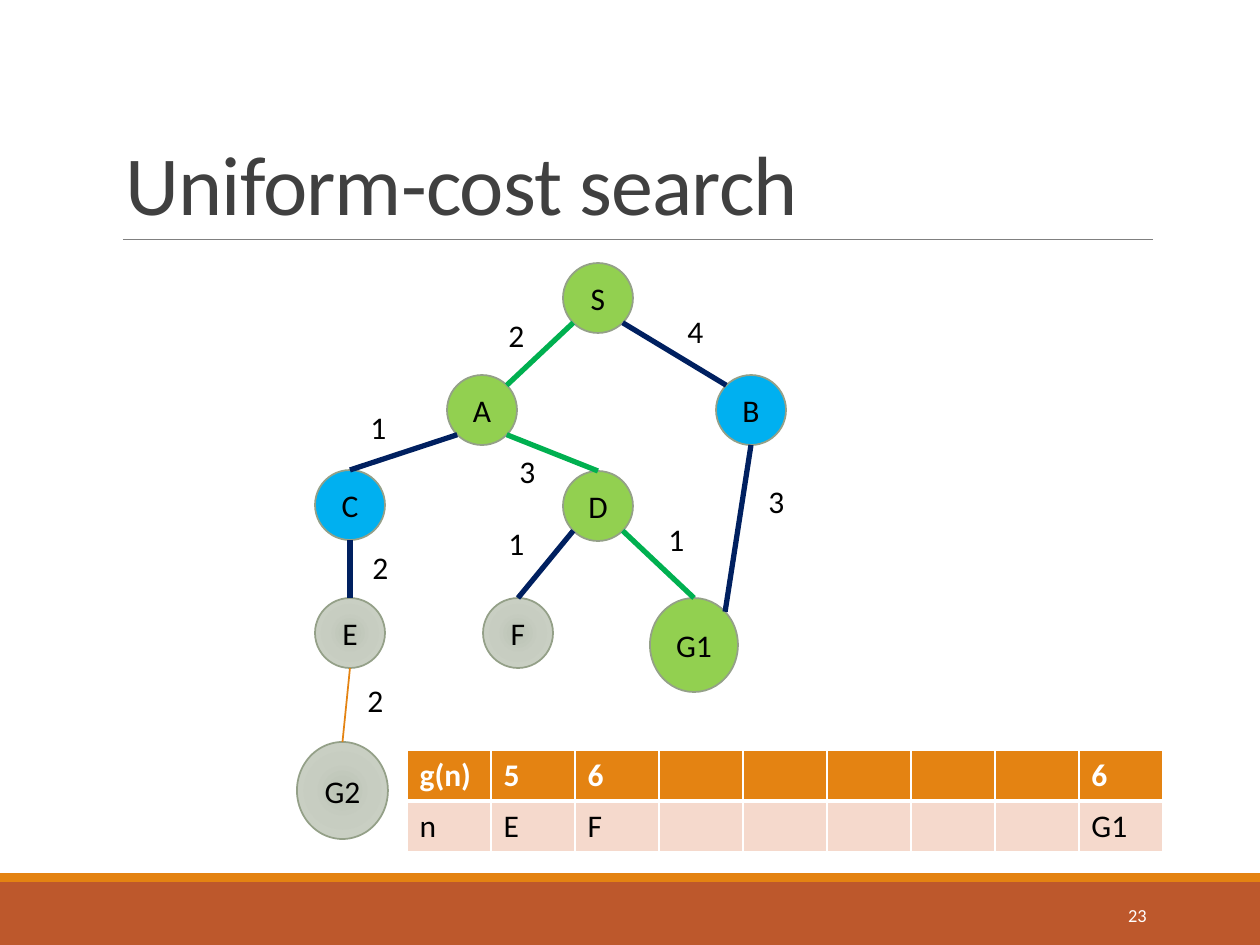
import math

from lxml import etree
from pptx import Presentation
from pptx import util as u
from pptx.dml.color import RGBColor
from pptx.enum import shapes, text
from pptx.oxml import parse_xml
from pptx.oxml.ns import nsdecls, qn

EMU_PER_PX = 914400 / 126
FONT = "Calibri"
COLORS = {
    "band": "BD582C", "accent": "E48312", "rule": "808080", "title": "404040",
    "black": "000000", "white": "FFFFFF", "outline": "94A088",
    "path": "92D050", "frontier": "00B0F0",
    "path_edge": "00B050", "edge": "002060", "table_row": "F5D9CC",
}
UNVISITED_STOPS = [(0, "BBC3B5"), (45, "C7CDC1"), (100, "CDD4C7")]

# name: (left, top, width, height, state)
NODES = {
    "S": (563, 263, 70, 70, "path"),
    "A": (447, 375, 70, 70, "path"),
    "B": (716, 375, 70, 70, "frontier"),
    "C": (315, 470, 70, 70, "frontier"),
    "D": (563, 471, 70, 70, "path"),
    "E": (315, 598, 70, 70, "unvisited"),
    "F": (483, 598, 70, 70, "unvisited"),
    "G1": (650, 598, 88, 94, "path"),
    "G2": (297, 742, 91, 97, "unvisited"),
}
# (parent, site, child, site, color, points, cost, cost left, cost top)
EDGES = [
    ("S", "bottom left", "A", "top right", "path_edge", 3, "2", 496, 310),
    ("S", "bottom right", "B", "top left", "edge", 3, "4", 675, 306),
    ("A", "bottom left", "C", "top", "edge", 3, "1", 358, 402),
    ("A", "bottom right", "D", "top", "path_edge", 3, "3", 507, 446),
    ("B", "bottom", "G1", "top right", "edge", 3, "3", 756, 476),
    ("C", "bottom", "E", "top", "edge", 3, "2", 360, 542),
    ("D", "bottom left", "F", "top", "edge", 3, "1", 496, 518),
    ("D", "bottom right", "G1", "top", "path_edge", 3, "1", 656, 514),
    ("E", "bottom", "G2", "top", "accent", 1, "2", 355, 675),
]
QUEUE = [
    ["g(n)", "5", "6", "", "", "", "", "", "6"],
    ["n", "E", "F", "", "", "", "", "", "G1"],
]


def px(value):
    return u.Emu(round(value * EMU_PER_PX))


def rgb(name):
    return RGBColor.from_string(COLORS[name])


def write(text_frame, words, size=18, color="black", align=text.PP_ALIGN.LEFT, bold=False):
    text_frame.text = words
    paragraph = text_frame.paragraphs[0]
    paragraph.alignment = align
    for run in paragraph.runs:
        run.font.name = FONT
        run.font.size = u.Pt(size)
        run.font.bold = bold
        run.font.color.rgb = rgb(color)
    return paragraph


def add_bar(slide, top, height, color):
    bar = slide.shapes.add_shape(shapes.MSO_SHAPE.RECTANGLE, 0, px(top), px(1260), px(height))
    bar.shadow.inherit = False
    bar.fill.solid()
    bar.fill.fore_color.rgb = rgb(color)
    bar.line.fill.background()


def add_line(slide, start, end, color, points):
    line = slide.shapes.add_connector(shapes.MSO_CONNECTOR.STRAIGHT, *map(px, (*start, *end)))
    line.line.color.rgb = rgb(color)
    line.line.width = u.Pt(points)
    etree.SubElement(line._element.spPr, qn("a:effectLst"))
    return line


def add_label(slide, left, top, width, height, words, **style):
    box = slide.shapes.add_textbox(*map(px, (left, top, width, height)))
    box.text_frame.word_wrap = True
    write(box.text_frame, words, **style)
    return box


def set_title(slide, words):
    title = slide.shapes.title
    title.left, title.top, title.width, title.height = map(px, (113, 39, 1040, 200))
    frame = title.text_frame
    frame.auto_size = text.MSO_AUTO_SIZE.NONE
    frame.vertical_anchor = text.MSO_ANCHOR.BOTTOM
    paragraph = write(frame, words, size=48, color="title")
    paragraph.line_spacing = 0.85
    paragraph.runs[0].font._element.set("spc", "-50")


def fill_radial(shape, stops):
    stop_xml = "".join(
        f'<a:gs pos="{position * 1000}"><a:srgbClr val="{color}"/></a:gs>'
        for position, color in stops)
    shape.fill.background()
    no_fill = shape._element.spPr.find(qn("a:noFill"))
    no_fill.getparent().replace(no_fill, parse_xml(
        f'<a:gradFill {nsdecls("a")} rotWithShape="1"><a:gsLst>{stop_xml}</a:gsLst>'
        '<a:path path="circle"><a:fillToRect l="100000" t="100000" r="100000" b="100000"/>'
        '</a:path></a:gradFill>'))


def add_node(slide, name):
    *bounds, state = NODES[name]
    node = slide.shapes.add_shape(shapes.MSO_SHAPE.FLOWCHART_CONNECTOR, *map(px, bounds))
    node.shadow.inherit = False
    if state == "unvisited":
        fill_radial(node, UNVISITED_STOPS)
    else:
        node.fill.solid()
        node.fill.fore_color.rgb = rgb(state)
    node.line.color.rgb = rgb("outline")
    node.line.width = u.Pt(1)
    frame = node.text_frame
    frame.word_wrap = False
    frame.vertical_anchor = text.MSO_ANCHOR.MIDDLE
    write(frame, name, align=text.PP_ALIGN.CENTER)
    return node


def site_point(name, site):
    """Point on a node's rim: top, bottom or one of the 45-degree diagonals."""
    left, top, width, height, _ = NODES[name]
    across = ("right" in site) - ("left" in site)
    down = 1 if "bottom" in site else -1
    reach = math.sqrt(0.5) if across else 1
    return (left + width / 2 * (1 + across * reach),
            top + height / 2 * (1 + down * reach))


def add_edge(slide, nodes, edge):
    parent, start, child, end, color, points, cost, left, top = edge
    line = add_line(slide, site_point(parent, start), site_point(child, end), color, points)
    if end == "top":
        line.end_connect(nodes[child], 0)
    add_label(slide, left, top, 49, 50, cost)


def set_borders(cell, bottom_points):
    properties = cell._tc.get_or_add_tcPr()
    sides = [("lnL", 1), ("lnR", 1), ("lnT", 1), ("lnB", bottom_points)]
    for index, (side, points) in enumerate(sides):
        properties.insert(index, parse_xml(
            f'<a:{side} {nsdecls("a")} w="{u.Pt(points)}"><a:solidFill>'
            f'<a:srgbClr val="{COLORS["white"]}"/></a:solidFill></a:{side}>'))


def add_queue(slide):
    columns = len(QUEUE[0])
    table = slide.shapes.add_table(
        len(QUEUE), columns, px(407), px(750), px(84 * columns), px(102)).table
    for row, values in enumerate(QUEUE):
        header = row == 0
        for column, value in enumerate(values):
            cell = table.cell(row, column)
            cell.fill.solid()
            cell.fill.fore_color.rgb = rgb("accent" if header else "table_row")
            write(cell.text_frame, value, color="white" if header else "black", bold=header)
            set_borders(cell, 3 if header else 1)
        # The lower row shares the header's thick border
    for cell in table.rows[1].cells:
        cell._tc.tcPr.find(qn("a:lnT")).set("w", str(u.Pt(3)))


def main():
    presentation = Presentation()
    presentation.slide_width, presentation.slide_height = px(1260), px(945)
    slide = presentation.slides.add_slide(presentation.slide_layouts[5])

    # Frame: footer bands, title and slide number
    add_bar(slide, 882, 63, "band")
    add_bar(slide, 873, 9, "accent")
    add_line(slide, (123, 239), (1153, 239), "rule", 0.5)
    set_title(slide, "Uniform-cost search")
    number = add_label(slide, 1023, 890, 136, 50, "23", size=10.5, color="white",
                       align=text.PP_ALIGN.RIGHT)
    number.text_frame.vertical_anchor = text.MSO_ANCHOR.MIDDLE

    # Search tree with path costs
    nodes = {name: add_node(slide, name) for name in NODES}
    for edge in EDGES:
        add_edge(slide, nodes, edge)

    # Priority queue
    add_queue(slide)
    presentation.save("out.pptx")


if __name__ == "__main__":
    main()
